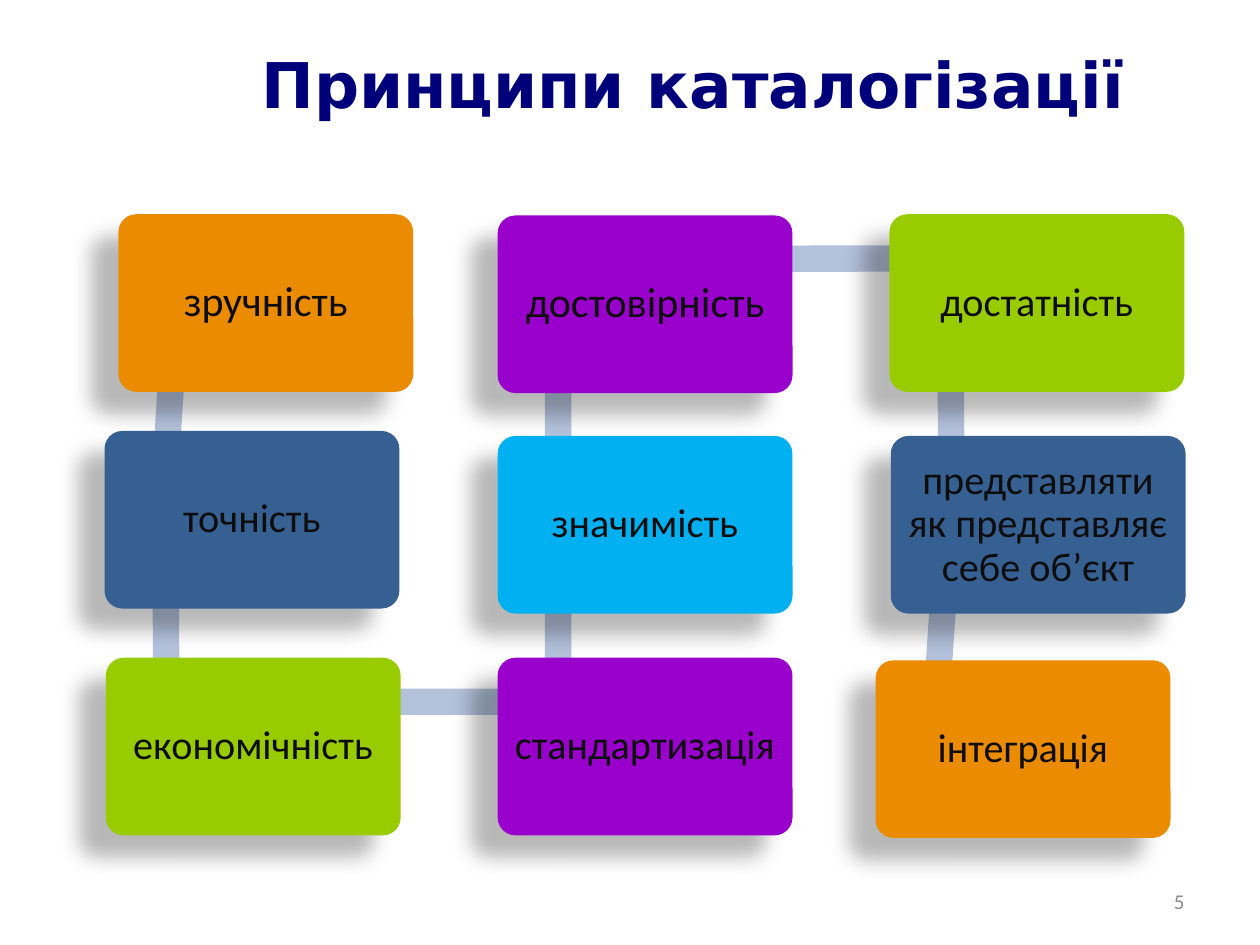
"""Build a slide of nine cataloguing principles linked in a winding chain."""
import math
from itertools import pairwise

from lxml import etree
from pptx import Presentation, util as u
from pptx.dml.color import RGBColor
from pptx.enum import shapes, text
from pptx.oxml import ns

TITLE = "Принципи каталогізації"
NUMBER = "5"
CARDS = [
    {"text": "зручність", "cell": (0, 0), "nudge": (0.1, 0), "fill": "orange", "size": 24},
    {"text": "точність", "cell": (0, 1), "nudge": (-0.01, -0.04), "fill": "navy"},
    {"text": "економічність", "cell": (0, 2), "fill": "green"},
    {"text": "стандартизація", "cell": (1, 2), "fill": "purple"},
    {"text": "значимість", "cell": (1, 1), "fill": "sky"},
    {"text": "достовірність", "cell": (1, 0), "nudge": (0, 0.01), "fill": "purple", "size": 24},
    {"text": "достатність", "cell": (2, 0), "fill": "green"},
    {"text": "представляти як представляє себе об’єкт", "cell": (2, 1),
     "nudge": (0.01, 0), "fill": "navy"},
    {"text": "інтеграція", "cell": (2, 2), "nudge": (-0.11, 0.02), "fill": "orange"},
]

THEME = {
    "colours": {"orange": "EA8B00", "navy": "376092", "green": "99CC00", "purple": "9900CC",
                "sky": "00B0F0", "link": "B3C1DB", "title": "00007A", "ink": "0D0D0D",
                "number": "8C8C8C", "shadow": "000000"},
    "title": {"name": "DejaVu Sans", "size": 36, "bold": True},
    "body": {"name": "Calibri", "size": 23},
    "number": {"name": "Calibri", "size": 12},
}
SLIDE = (10, 7.5)
ORIGIN, PITCH = (0.84, 1.7), (3.11, 1.76)
CARD_W, CARD_H = 2.34, 1.41
LINK_H, LINK_SHIFT = 0.21, (0.48, 0.35)
PAD = 0.06
MIDDLE, CENTER = text.MSO_ANCHOR.MIDDLE, text.PP_ALIGN.CENTER


def colour(name):
    return RGBColor.from_string(THEME["colours"][name])


def inches(*lengths):
    return [u.Inches(n) for n in lengths]


def assign(obj, values):
    for key, value in values.items():
        setattr(obj, key, value)


def write(sp, words, font, ink, align=CENTER, pad=0.1, spacing=1.0):
    tf = sp.text_frame
    assign(tf, {"word_wrap": True, "vertical_anchor": MIDDLE,
                "margin_left": u.Inches(pad), "margin_right": u.Inches(pad)})
    p = tf.paragraphs[0]
    assign(p, {"alignment": align, "line_spacing": spacing})
    r = p.add_run()
    r.text = words
    assign(r.font, {**font, "size": u.Pt(font["size"])})
    r.font.color.rgb = colour(ink)


def add_block(s, kind, box, fill):
    sp = s.shapes.add_shape(kind, *inches(*box))
    sp.shadow.inherit = False
    sp.fill.solid()
    sp.fill.fore_color.rgb = colour(fill)
    sp.line.fill.background()
    return sp


def add_shadow(sp):
    effects = sp._element.spPr.find(ns.qn("a:effectLst"))
    outer = etree.SubElement(effects, ns.qn("a:outerShdw"), blurRad=str(u.Pt(11.8)),
                             dist=str(u.Pt(19.7)), dir=str(141 * 60000), rotWithShape="0")
    clr = etree.SubElement(outer, ns.qn("a:srgbClr"), val=THEME["colours"]["shadow"])
    etree.SubElement(clr, ns.qn("a:alpha"), val="28000")


def corner(card):
    return [o + c * d + n for o, c, d, n in
            zip(ORIGIN, card["cell"], PITCH, card.get("nudge", (0, 0)))]


def add_link(s, start, end):
    cx, cy = [(a + b) / 2 + shift for a, b, shift in zip(start, end, LINK_SHIFT)]
    length = math.dist(start, end)
    box = (cx - length / 2, cy - LINK_H / 2, length, LINK_H)
    sp = add_block(s, shapes.MSO_SHAPE.RECTANGLE, box, "link")
    sp.rotation = math.degrees(math.atan2(end[1] - start[1], end[0] - start[0])) % 360


def add_card(s, card):
    box = (*corner(card), CARD_W, CARD_H)
    sp = add_block(s, shapes.MSO_SHAPE.ROUNDED_RECTANGLE, box, card["fill"])
    sp.adjustments[0] = 0.1
    add_shadow(sp)
    font = {**THEME["body"], "size": card.get("size", THEME["body"]["size"])}
    write(sp, card["text"], font, "ink", pad=PAD, spacing=0.9)


def main():
    prs = Presentation()
    prs.slide_width, prs.slide_height = inches(*SLIDE)
    s = prs.slides.add_slide(prs.slide_layouts[6])
    title = s.shapes.add_textbox(*inches(1, 0.08, 9, 1.17))
    write(title, TITLE, THEME["title"], "title")
    number = s.shapes.add_textbox(*inches(7.17, 6.95, 2.33, 0.4))
    write(number, NUMBER, THEME["number"], "number", text.PP_ALIGN.RIGHT)
    for card, following in pairwise(CARDS):
        add_link(s, corner(card), corner(following))
        add_card(s, card)
    add_card(s, CARDS[-1])
    prs.save("out.pptx")


if __name__ == "__main__":
    main()
